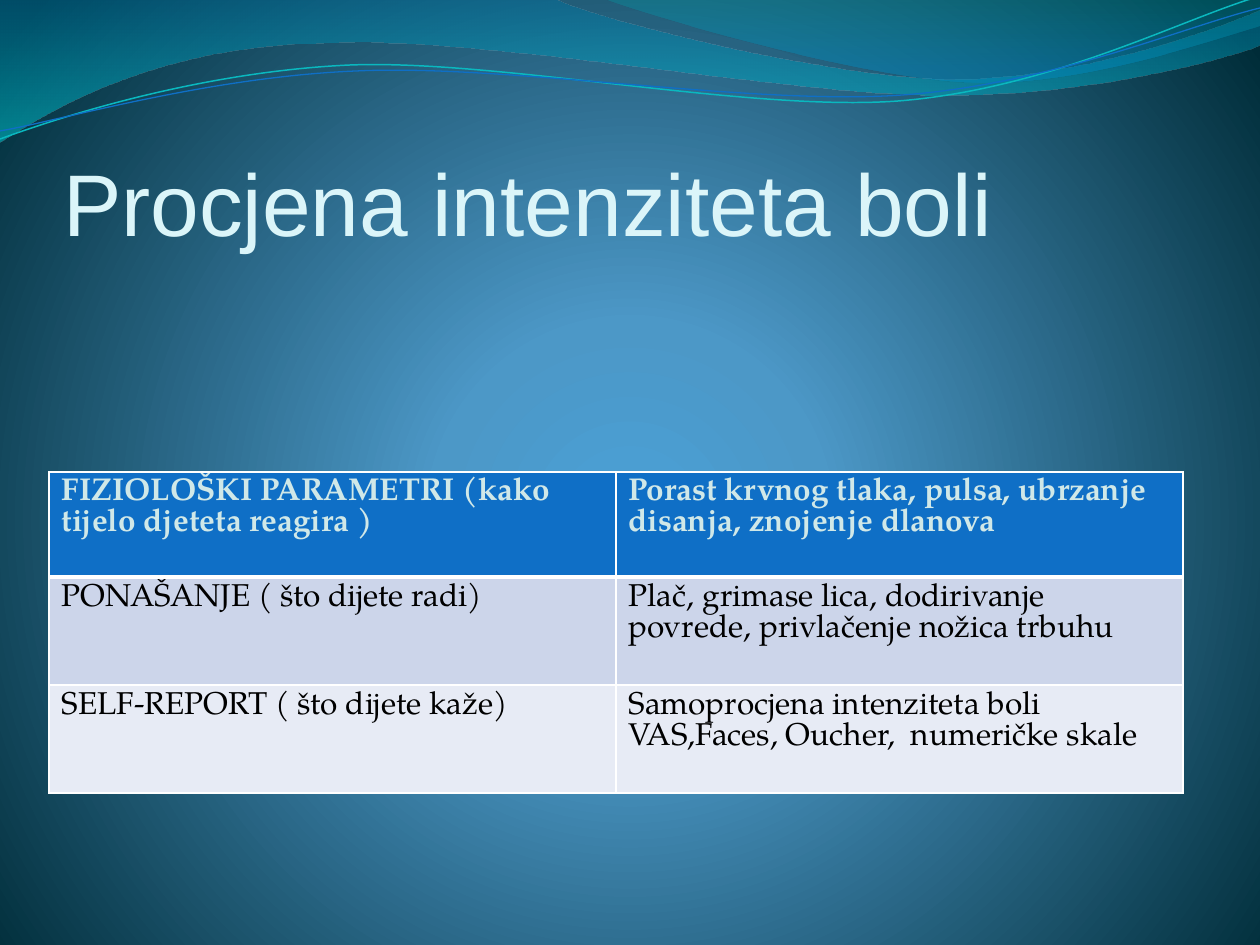
import dataclasses

import pptx
import pptx.dml.color
import pptx.enum.text
import pptx.oxml
import pptx.oxml.ns
import pptx.util

PX = 914400 / 126
NAMESPACE = pptx.oxml.ns.nsdecls("a")


@dataclasses.dataclass(frozen=True)
class Theme:
    title_font: str = "Arial"
    body_font: str = "TeX Gyre Pagella"
    title_size: int = 50
    body_size: int = 18
    title_color: str = "DBF5F9"
    header_color: str = "D0E8E8"
    body_color: str = "000000"
    border_color: str = "FFFFFF"
    row_fills: tuple = ("0F6FC6", "CCD5EA", "E7EBF5")
    backdrop: tuple = ((0, "4AA0D6", 100), (25, "4C98C7", 100), (100, "002C38", 100))
    wide_wave: tuple = ((0, "0074A1", 45), (100, "00C6CF", 55))
    right_wave: tuple = ((0, "00A1A9", 30), (80, "008BBF", 45))
    teal_line: str = "0AB8BF"
    blue_line: str = "0F6FC6"


THEME = Theme()

# Each segment holds one point (straight) or three points (cubic curve).
WIDE_WAVE = (
    (0, 0),
    [
        [(554, -1)],
        [(600, 21), (837, 79), (955, 79)],
        [(1075, 79), (1207, 33), (1260, 11)],
        [(1261, 45)],
        [(1239, 55), (1096, 96), (940, 95)],
        [(784, 95), (481, 35), (324, 43)],
        [(163, 45), (58, 105), (-1, 142)],
    ],
)
RIGHT_WAVE = (
    (604, -1),
    [
        [(641, 14), (859, 78), (969, 82)],
        [(1079, 87), (1211, 40), (1260, 26)],
        [(1260, 0)],
    ],
)
TEAL_LINE = (
    (0, 139),
    [
        [(60, 117), (199, 72), (349, 65)],
        [(498, 59), (747, 112), (898, 101)],
        [(1050, 89), (1182, 19), (1257, -3)],
    ],
)
BLUE_LINE = (
    (0, 131),
    [
        [(59, 121), (207, 77), (357, 71)],
        [(508, 64), (752, 106), (903, 95)],
        [(1053, 84), (1186, 26), (1260, 8)],
    ],
)

ROWS = (
    ("FIZIOLOŠKI PARAMETRI (kako tijelo djeteta reagira )",
     "Porast krvnog tlaka, pulsa, ubrzanje disanja, znojenje dlanova"),
    ("PONAŠANJE ( što dijete radi)",
     "Plač, grimase lica, dodirivanje povrede, privlačenje nožica trbuhu"),
    ("SELF-REPORT ( što dijete kaže)",
     "Samoprocjena intenziteta boli VAS,Faces, Oucher,  numeričke skale"),
)


def px(length):
    return pptx.util.Emu(round(length * PX))


def rgb(value):
    return pptx.dml.color.RGBColor.from_string(value)


def set_gradient(fill, holder, stops, direction):
    """Fill with (position, colour, opacity) stops; direction is a:lin or a:path XML."""
    fill.gradient()
    gradient = next(holder.iter(pptx.oxml.ns.qn("a:gradFill")))
    stop_xml = "".join(
        f'<a:gs pos="{position * 1000}"><a:srgbClr val="{color}">'
        f'<a:alpha val="{opacity * 1000}"/></a:srgbClr></a:gs>'
        for position, color, opacity in stops
    )
    gradient.getparent().replace(gradient, pptx.oxml.parse_xml(
        f'<a:gradFill {NAMESPACE} rotWithShape="1">'
        f"<a:gsLst>{stop_xml}</a:gsLst>{direction}</a:gradFill>"
    ))


def write_text(frame, text, font, size, color, bold=False):
    para = frame.paragraphs[0]
    para.alignment = pptx.enum.text.PP_ALIGN.LEFT
    span = para.add_run()
    span.text = text
    span.font.name = font
    span.font.size = pptx.util.Pt(size)
    span.font.bold = bold
    span.font.color.rgb = rgb(color)


def add_outline(page, outline, left, top, closed):
    """Build the outline from its end points, then bend the curved segments."""
    start, segments = outline
    vertices = [(px(left + x), px(top + y))
                for x, y in [start] + [segment[-1] for segment in segments]]
    builder = page.shapes.build_freeform(*vertices[0], scale=1.0)
    builder.add_line_segments(vertices[1:], close=closed)
    shape = builder.convert_to_shape()
    shape.shadow.inherit = False
    straight_parts = list(shape.element.iter(pptx.oxml.ns.qn("a:lnTo")))
    for straight, segment in zip(straight_parts, segments):
        if len(segment) == 3:
            points = "".join(
                f'<a:pt x="{px(left + x) - shape.left}" y="{px(top + y) - shape.top}"/>'
                for x, y in segment
            )
            straight.getparent().replace(straight, pptx.oxml.parse_xml(
                f"<a:cubicBezTo {NAMESPACE}>{points}</a:cubicBezTo>"))
    return shape


def add_waves(page, left, top):
    for outline, stops in ((WIDE_WAVE, THEME.wide_wave), (RIGHT_WAVE, THEME.right_wave)):
        wave = add_outline(page, outline, left, top, closed=True)
        set_gradient(wave.fill, wave.element, stops, '<a:lin ang="5400000" scaled="0"/>')
        wave.line.fill.background()
    for outline, color, width in ((TEAL_LINE, THEME.teal_line, 0.85),
                                  (BLUE_LINE, THEME.blue_line, 0.75)):
        line = add_outline(page, outline, left, top, closed=False)
        line.fill.background()
        line.line.color.rgb = rgb(color)
        line.line.width = pptx.util.Pt(width)


def add_title(page, left, top, width, height):
    box = page.shapes.title
    box.left, box.top, box.width, box.height = map(px, (left, top, width, height))
    frame = box.text_frame
    frame.margin_left = frame.margin_right = frame.margin_bottom = 0
    frame.margin_top = px(6)
    frame.vertical_anchor = pptx.enum.text.MSO_ANCHOR.BOTTOM
    write_text(frame, "Procjena intenziteta boli", font=THEME.title_font,
               size=THEME.title_size, color=THEME.title_color)


def set_borders(cell, widths):
    """Draw cell borders; widths maps L, R, T and B to points, in that order."""
    properties = cell._tc.get_or_add_tcPr()
    for index, (side, width) in enumerate(widths.items()):
        properties.insert(index, pptx.oxml.parse_xml(
            f'<a:ln{side} {NAMESPACE} w="{pptx.util.Pt(width)}"><a:solidFill>'
            f'<a:srgbClr val="{THEME.border_color}"/></a:solidFill></a:ln{side}>'
        ))


def add_parameter_table(page, left, top, width, row_heights):
    table = page.shapes.add_table(
        len(ROWS), len(ROWS[0]), *map(px, (left, top, width, sum(row_heights)))).table
    for row_index, texts in enumerate(ROWS):
        table.rows[row_index].height = px(row_heights[row_index])
        header = row_index == 0
        for column_index, text in enumerate(texts):
            cell = table.cell(row_index, column_index)
            cell.fill.solid()
            cell.fill.fore_color.rgb = rgb(THEME.row_fills[row_index])
            set_borders(cell, {"L": 1, "R": 1, "T": 3 if row_index == 1 else 1,
                               "B": 3 if header else 1})
            write_text(cell.text_frame, text, font=THEME.body_font, size=THEME.body_size,
                       color=THEME.header_color if header else THEME.body_color,
                       bold=header)


def main():
    deck = pptx.Presentation()
    deck.slide_width, deck.slide_height = px(1260), px(945)
    page = deck.slides.add_slide(deck.slide_layouts[5])
    set_gradient(page.background.fill, page.element, THEME.backdrop,
                 '<a:path path="circle"><a:fillToRect l="10000" t="110000" '
                 'r="10000" b="100000"/></a:path>')
    add_waves(page, 0, 0)
    add_title(page, 63, 96, 1134, 158)
    add_parameter_table(page, 49, 472, 1134, row_heights=(105, 108, 108))
    deck.save("out.pptx")


if __name__ == "__main__":
    main()
